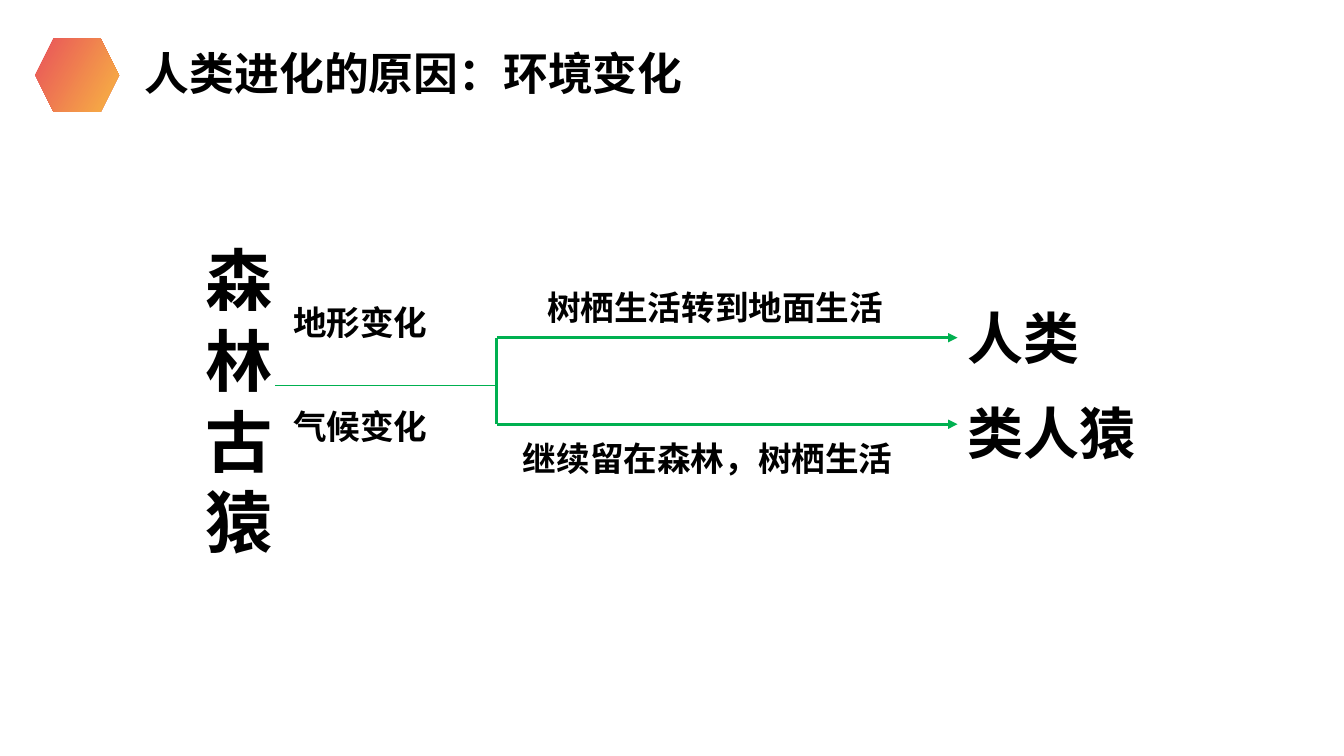
from dataclasses import dataclass

from lxml.etree import SubElement
from pptx import Presentation
from pptx.dml.color import RGBColor
from pptx.enum.shapes import MSO_CONNECTOR as Connector, MSO_SHAPE as Shape
from pptx.oxml.ns import qn
from pptx.util import Cm, Pt


@dataclass(frozen=True)
class Theme:
    font: str = "Arial"
    ink: str = "000000"
    branch: str = "00B050"
    badge: tuple = ("E8525B", "F8B542")
    title: int = 32
    source: int = 48
    outcome: int = 40
    label: int = 24
    thin: float = 0.5
    thick: float = 2.25


@dataclass(frozen=True)
class Box:
    """A rectangle in centimetres."""
    left: float
    top: float
    width: float
    height: float

    def inner(self, left, top, width, height):
        return Box(self.left + left, self.top + top, width, height)

    def lengths(self):
        return [Cm(value) for value in (self.left, self.top, self.width, self.height)]


THEME = Theme()
LEFT_SIDE = 1


def add_text(page, box, lines, size):
    shape = page.shapes.add_textbox(*box.lengths())
    frame = shape.text_frame
    frame.word_wrap = True
    for index, line in enumerate(lines):
        para = frame.add_paragraph() if index else frame.paragraphs[0]
        run = para.add_run()
        run.text = line
        run.font.name = THEME.font
        run.font.size = Pt(size)
        run.font.bold = True
        run.font.color.rgb = RGBColor.from_string(THEME.ink)
    return shape


def add_line(page, box, start, end, width, arrow=False):
    """Draw a line between two points measured from the corner of the box."""
    points = [Cm(value) for x, y in (start, end) for value in (box.left + x, box.top + y)]
    line = page.shapes.add_connector(Connector.STRAIGHT, *points)
    line.line.color.rgb = RGBColor.from_string(THEME.branch)
    line.line.width = Pt(width)
    if arrow:
        SubElement(line.line._get_or_add_ln(), qn("a:tailEnd"), type="triangle")
    SubElement(line._element.spPr, qn("a:effectLst"))
    return line


def draw_header(page, box):
    badge = page.shapes.add_shape(Shape.HEXAGON, *box.inner(0, 0, 2.11, box.height).lengths())
    badge.shadow.inherit = False
    badge.line.fill.background()
    badge.fill.gradient()
    badge.fill.gradient_angle = 330
    for stop, color in zip(badge.fill.gradient_stops, THEME.badge):
        stop.color.rgb = RGBColor.from_string(color)
    add_text(page, box.inner(2.51, 0.07, 14.55, 1.63), ["人类进化的原因：环境变化"], THEME.title)


def draw_evolution(page, box):
    """Show the forest apes splitting into two lines of descent."""
    fork, tip = 7.59, 19.2
    stem, upper, lower = 3.81, 2.62, 4.8

    add_text(page, box.inner(0, 0, 2.26, box.height), "森林古猿", THEME.source)
    labels = (
        ("地形变化", 2.21, 1.6, 5.61),
        ("气候变化", 2.21, 4.22, 4.01),
        ("树栖生活转到地面生活", 8.61, 1.22, 9.19),
        ("继续留在森林，树栖生活", 8, 5.03, 10.21),
    )
    for text, left, top, width in labels:
        add_text(page, box.inner(left, top, width, 1.27), [text], THEME.label)

    height = 1.96
    humans = add_text(page, box.inner(tip, upper - height / 2, 3.99, height), ["人类"], THEME.outcome)
    add_text(page, box.inner(tip, 4.02, 5.49, height), ["类人猿"], THEME.outcome)

    add_line(page, box, (fork, stem), (2, stem), THEME.thin)
    add_line(page, box, (fork, upper), (fork, lower), THEME.thick)
    to_humans = add_line(page, box, (fork, upper), (tip, upper), THEME.thick, arrow=True)
    to_humans.end_connect(humans, LEFT_SIDE)
    add_line(page, box, (fork, lower), (tip, lower), THEME.thick, arrow=True)


def main():
    deck = Presentation()
    deck.slide_width, deck.slide_height = Cm(33.87), Cm(19.05)
    page = deck.slides.add_slide(deck.slide_layouts[6])
    draw_header(page, Box(0.89, 0.97, 17.06, 1.85))
    draw_evolution(page, Box(4.93, 5.89, 24.69, 8.46))
    deck.save("out.pptx")


if __name__ == "__main__":
    main()
